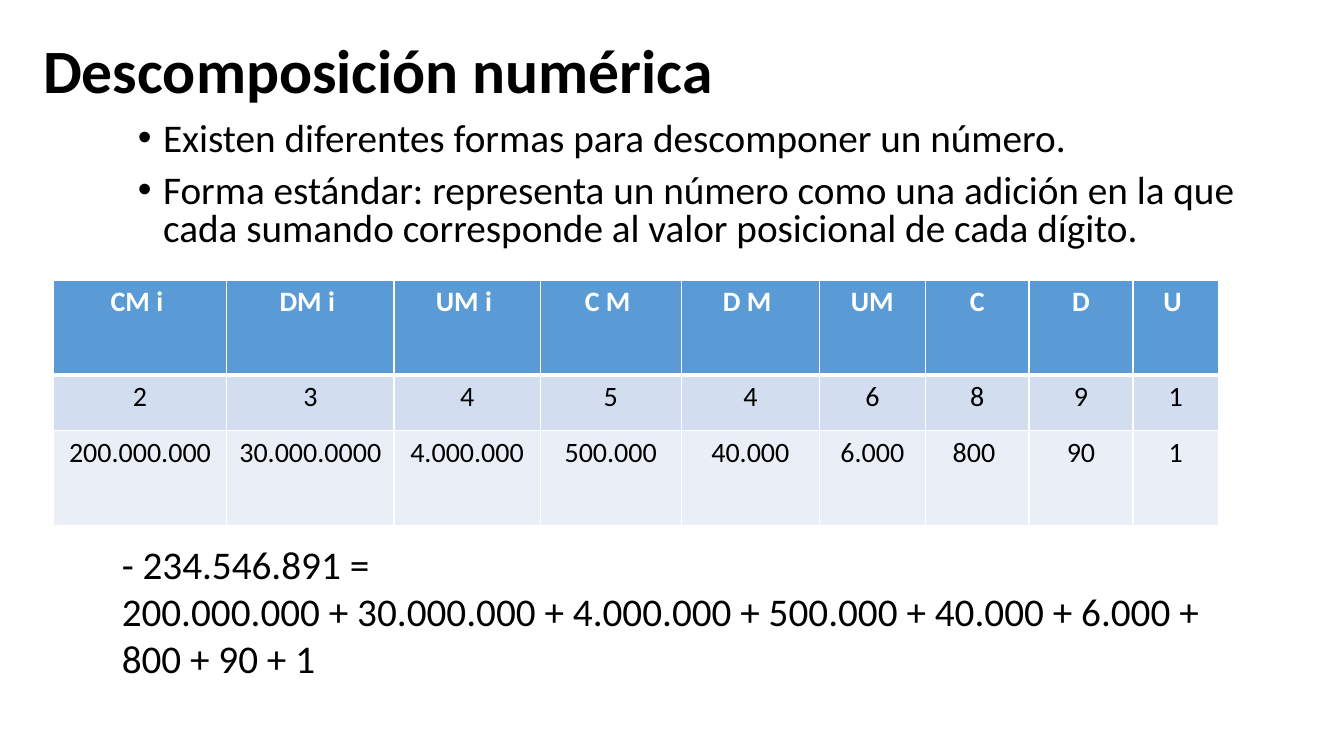
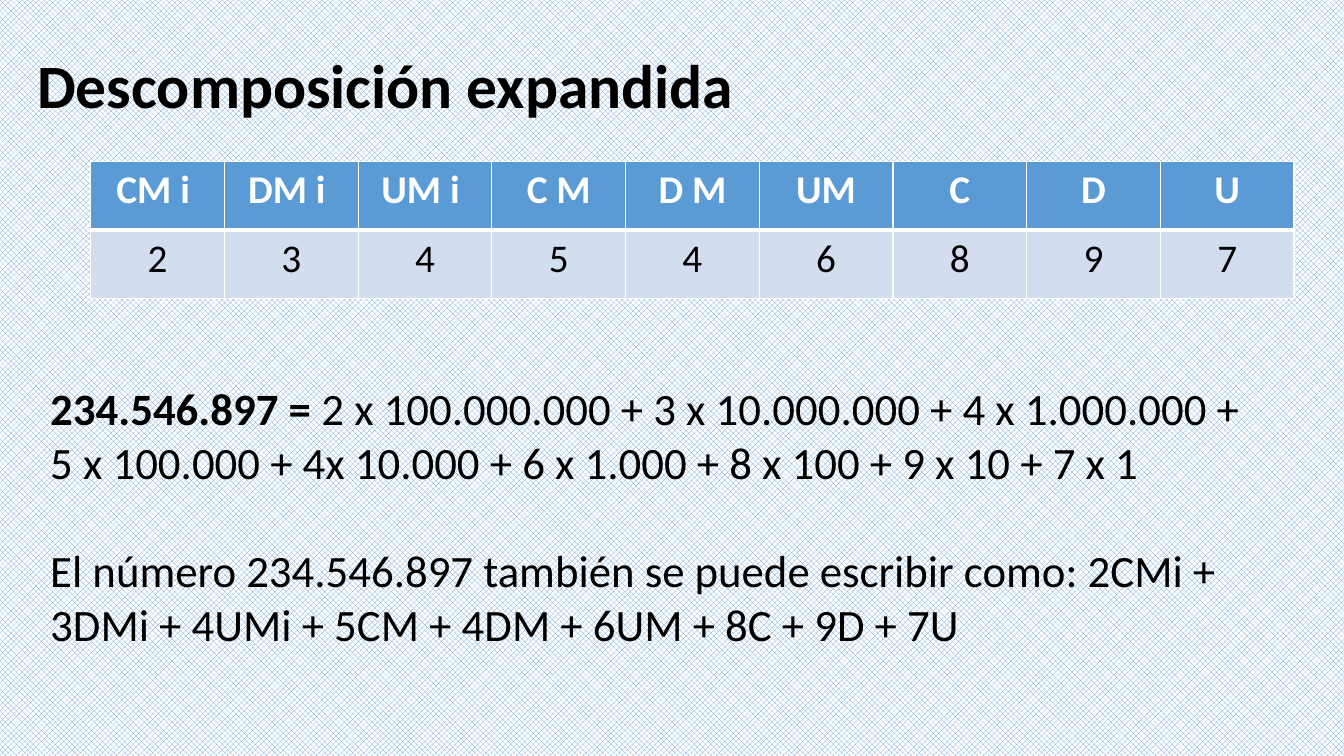
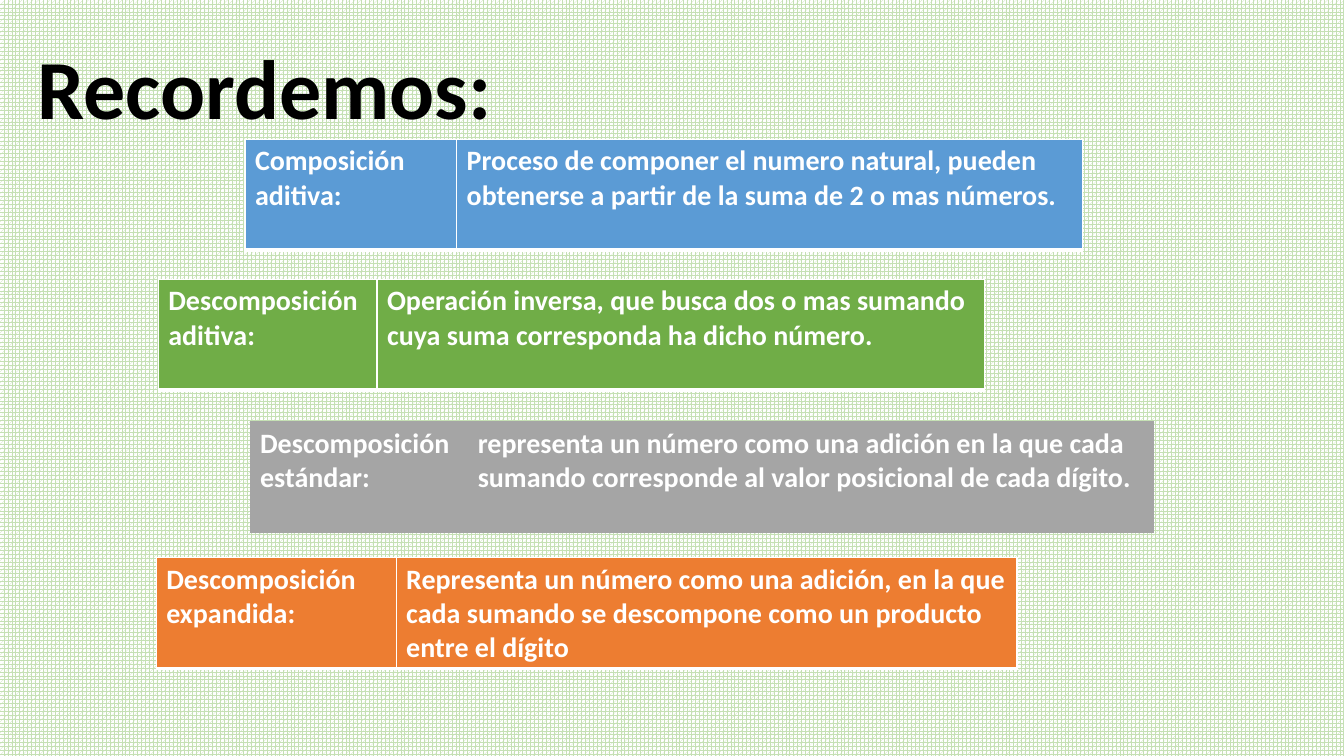
"""Build three slides about decomposing numbers."""
from lxml import etree
from pptx import Presentation
from pptx import util as u
from pptx.dml.color import RGBColor
from pptx.enum import dml, text
from pptx.oxml.ns import qn

PX = 9144
FONT = "Calibri"
HUE = dict(black="000000", white="FFFFFF", blue="5B9BD5", pale="D2DEEF", mist="EAEFF7",
           green="70AD47", lime="C5E0B4", gray="A5A5A5", orange="ED7D31")


def rgb(name):
    return RGBColor.from_string(HUE[name])


def write(frame, *lines, size=28, color="black", bold=False, align=None,
          line=None, gap=0, bullet=False, lead="", anchor=None):
    frame.word_wrap = True
    if anchor is not None:
        frame.vertical_anchor = anchor
    for n, words in enumerate(lines):
        para = frame.paragraphs[0] if n == 0 else frame.add_paragraph()
        if bullet:
            props = para._p.get_or_add_pPr()
            props.set("marL", "228600")
            props.set("indent", "-228600")
            etree.SubElement(props, qn("a:buFont")).set("typeface", "Arial")
            etree.SubElement(props, qn("a:buChar")).set("char", "•")
        para.alignment = align
        para.line_spacing = line
        if n and gap:
            para.space_before = u.Pt(gap)
        parts = [(words, bold)]
        if lead and n == 0:
            parts.insert(0, (lead, True))
        for part, heavy in parts:
            run = para.add_run()
            run.text = part
            run.font.name = FONT
            run.font.size = u.Pt(size)
            run.font.bold = heavy
            run.font.color.rgb = rgb(color)


deck = Presentation()
deck.slide_width, deck.slide_height = u.Inches(13.333), u.Inches(7.5)

TITLES = [
    ("Descomposición numérica", (33, 0, 1150, 145), 44, None, None),
    ("Descomposición expandida", (27, 15, 1150, 145), 44, "openDmnd", "blue"),
    ("Recordemos:", (27, 26, 1150, 132), 60, "sphere", "lime"),
]
slides = []
boxes = []
for title, place, size, weave, ink in TITLES:
    slide = deck.slides.add_slide(deck.slide_layouts[6])
    slides.append(slide)
    back = slide.background.fill
    if weave:
        back.patterned()
        back.pattern = dml.MSO_PATTERN.from_xml(weave)
        back.fore_color.rgb = rgb(ink)
        back.back_color.rgb = rgb("white")
    else:
        back.solid()
        back.fore_color.rgb = rgb("white")
    boxes.append((slide, place, [title], dict(size=size, bold=True, line=0.9,
                                              anchor=text.MSO_ANCHOR.MIDDLE)))

first, second, recap = slides
boxes += [
    (first, (127, 117, 1150, 147),
     ["Existen diferentes formas para descomponer un número.",
      "Forma estándar: representa un número como una adición en la que cada sumando "
      "corresponde al valor posicional de cada dígito."],
     dict(line=0.8, gap=10, bullet=True)),
    (first, (111, 531, 1150, 151),
     ["- 234.546.891 =",
      "200.000.000 + 30.000.000 + 4.000.000 + 500.000 + 40.000 + 6.000 + 800 + 90 + 1"], {}),
    (second, (40, 373, 1228, 279),
     ["2 x 100.000.000 + 3 x 10.000.000 + 4 x 1.000.000 + 5 x 100.000 + 4x 10.000 + "
      "6 x 1.000 + 8 x 100 + 9 x 10 + 7 x 1",
      "El número 234.546.897 también se puede escribir como: 2CMi + 3DMi + 4UMi + 5CM + "
      "4DM + 6UM + 8C + 9D + 7U"],
     dict(size=32, gap=39, lead="234.546.897 = ")),
]
for slide, place, lines, style in boxes:
    box = slide.shapes.add_textbox(*(n * PX for n in place))
    write(box.text_frame, *lines, **style)

MID = text.PP_ALIGN.CENTER
tables = [
    (first, (53, 278), [172, 166, 145, 140, 137, 105, 103, 103, 85], [94, 55, 94],
     ["blue", "pale", "mist"], dict(size=20, align=MID),
     [["CM i ", "DM i ", "UM i ", "C M ", "D M ", "UM", "C", "D", "U "],
      list("234546891"),
      ["200.000.000", "30.000.0000", "4.000.000", "500.000", "40.000", "6.000",
       "800 ", "90", "1"]]),
    (second, (90, 160), [1194 / 9] * 9, [68, 68], ["blue", "pale"],
     dict(size=28, align=MID),
     [["CM i ", "DM i ", "UM i ", "C M", "D M", "UM", "C", "D", "U"], list("234546897")]),
]
RECAP = [
    ((243, 138), [210, 621], "blue", "Composición aditiva:",
     "Proceso de componer el numero natural, pueden obtenerse a partir de la suma de 2 o mas "
     "números."),
    ((157, 277), [217, 603], "green", "Descomposición aditiva:",
     "Operación inversa, que busca dos o mas sumando cuya suma corresponda ha dicho número."),
    ((248, 418), [216, 680], "gray", "Descomposición estándar:",
     "representa un número como una adición en la que cada sumando corresponde al valor "
     "posicional de cada dígito."),
    ((155, 553), [238, 616], "orange", "Descomposición expandida:",
     "Representa un número como una adición, en la que cada sumando se descompone como un "
     "producto entre el dígito"),
]
for place, cols, fill, term, sense in RECAP:
    tables.append((recap, place, cols, [110], [fill], dict(size=20), [[term, sense]]))

for slide, (left, top), cols, rows, fills, style, cells in tables:
    grid = slide.shapes.add_table(len(rows), len(cols), left * PX, top * PX,
                                  round(sum(cols) * PX), sum(rows) * PX).table
    grid.horz_banding = False
    for n, wide in enumerate(cols):
        grid.columns[n].width = round(wide * PX)
    plain = fills[0] == "gray"
    thin, thick = (0.5, 0.5) if plain else (1, 3)
    for r, row in enumerate(cells):
        grid.rows[r].height = rows[r] * PX
        for c, words in enumerate(row):
            cell = grid.cell(r, c)
            props = cell._tc.get_or_add_tcPr()
            for side in "LRTB":
                heavy = (r, side) in [(0, "B"), (1, "T")]
                edge = etree.SubElement(props, qn(f"a:ln{side}"))
                edge.set("w", str(u.Pt(thick if heavy else thin)))
                paint = etree.SubElement(edge, qn("a:solidFill"))
                tint = etree.SubElement(paint, qn("a:srgbClr"))
                tint.set("val", HUE["gray" if plain else "white"])
            cell.fill.solid()
            cell.fill.fore_color.rgb = rgb(fills[r])
            write(cell.text_frame, words, bold=r == 0,
                  color="black" if r else "white", **style)

deck.save("out.pptx")
